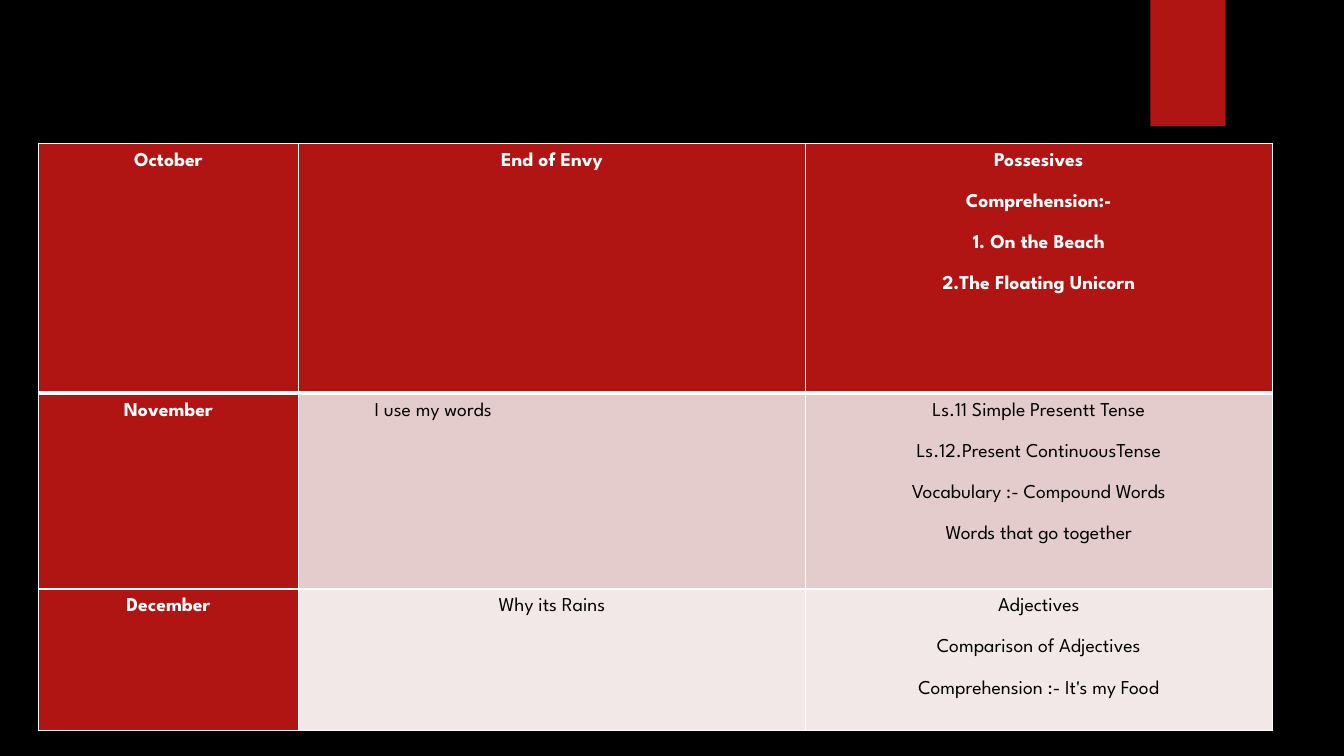
import pptx
import pptx.dml.color
import pptx.enum.shapes
import pptx.enum.text
import pptx.oxml.ns
import pptx.util
from lxml import etree

Cm, Pt = pptx.util.Cm, pptx.util.Pt
RGB = pptx.dml.color.RGBColor.from_string
CENTER = pptx.enum.text.PP_ALIGN.CENTER
LEFT = pptx.enum.text.PP_ALIGN.LEFT

COLORS = {
    "black": "000000",
    "white": "FFFFFF",
    "red": "B01513",
    "rose": "E4CCCC",
    "pale": "F2E8E7",
}
FONT = "League Spartan"
WIDTHS = [6.55, 12.78, 11.76]
HEIGHTS = [6.3, 4.93, 3.56]
FILLS = ["red", "rose", "pale"]
ROWS = [
    [["October"], ["End of Envy"],
     ["Possesives", "Comprehension:-", "1. On the Beach",
      "2.The Floating Unicorn"]],
    [["November"], ["I use my words"],
     ["Ls.11 Simple Presentt Tense", "Ls.12.Present ContinuousTense",
      "Vocabulary :- Compound Words", "Words that go together"]],
    [["December"], ["Why its Rains"],
     ["Adjectives", "Comparison of Adjectives",
      "Comprehension :- It's my Food"]],
]


def add_edge(cell, side, width):
    """Draw a white border on one side (L, R, T or B) of a cell."""
    qn = pptx.oxml.ns.qn
    line = etree.SubElement(cell._tc.get_or_add_tcPr(), qn("a:ln" + side),
                            w=str(Pt(width)))
    fill = etree.SubElement(line, qn("a:solidFill"))
    etree.SubElement(fill, qn("a:srgbClr"), val=COLORS["white"])


deck = pptx.Presentation()
deck.slide_width, deck.slide_height = Cm(33.87), Cm(19.05)
slide = deck.slides.add_slide(deck.slide_layouts[6])
back = slide.background.fill
back.solid()
back.fore_color.rgb = RGB(COLORS["black"])

# Red tab at the top edge
tab = slide.shapes.add_shape(pptx.enum.shapes.MSO_SHAPE.RECTANGLE,
                             Cm(28.99), Cm(0), Cm(1.9), Cm(3.18))
tab.shadow.inherit = False
tab.fill.solid()
tab.fill.fore_color.rgb = RGB(COLORS["red"])
tab.line.fill.background()

# Monthly plan
table = slide.shapes.add_table(len(ROWS), len(WIDTHS), Cm(0.97), Cm(3.61),
                               Cm(sum(WIDTHS)), Cm(sum(HEIGHTS))).table
for col, width in zip(table.columns, WIDTHS):
    col.width = Cm(width)

for r, texts in enumerate(ROWS):
    table.rows[r].height = Cm(HEIGHTS[r])
    for c, lines in enumerate(texts):
        cell = table.cell(r, c)
        head = r == 0 or c == 0
        cell.margin_left = cell.margin_right = Cm(0.19)
        cell.margin_top = cell.margin_bottom = Cm(0)
        edges = {"L": 1, "R": 1, "T": 3 if r == 1 else 1,
                 "B": 3 if r == 0 else 1}
        for side, width in edges.items():
            add_edge(cell, side, width)
        cell.fill.solid()
        cell.fill.fore_color.rgb = RGB(COLORS["red" if head else FILLS[r]])

        for i, line in enumerate(lines):
            frame = cell.text_frame
            para = frame.paragraphs[0] if i == 0 else frame.add_paragraph()
            para.alignment = CENTER
            para.line_spacing = 1.5
            para.space_after = Pt(10)
            run = para.add_run()
            run.text = line
            run.font.name = FONT
            run.font.size = Pt(14)
            run.font.bold = head
            run.font.color.rgb = RGB(COLORS["white" if head else "black"])

# The November story is indented from the left
story = table.cell(1, 1).text_frame.paragraphs[0]
story.alignment = LEFT
story._p.get_or_add_pPr().set("marL", str(Cm(1.73)))

deck.save("out.pptx")
